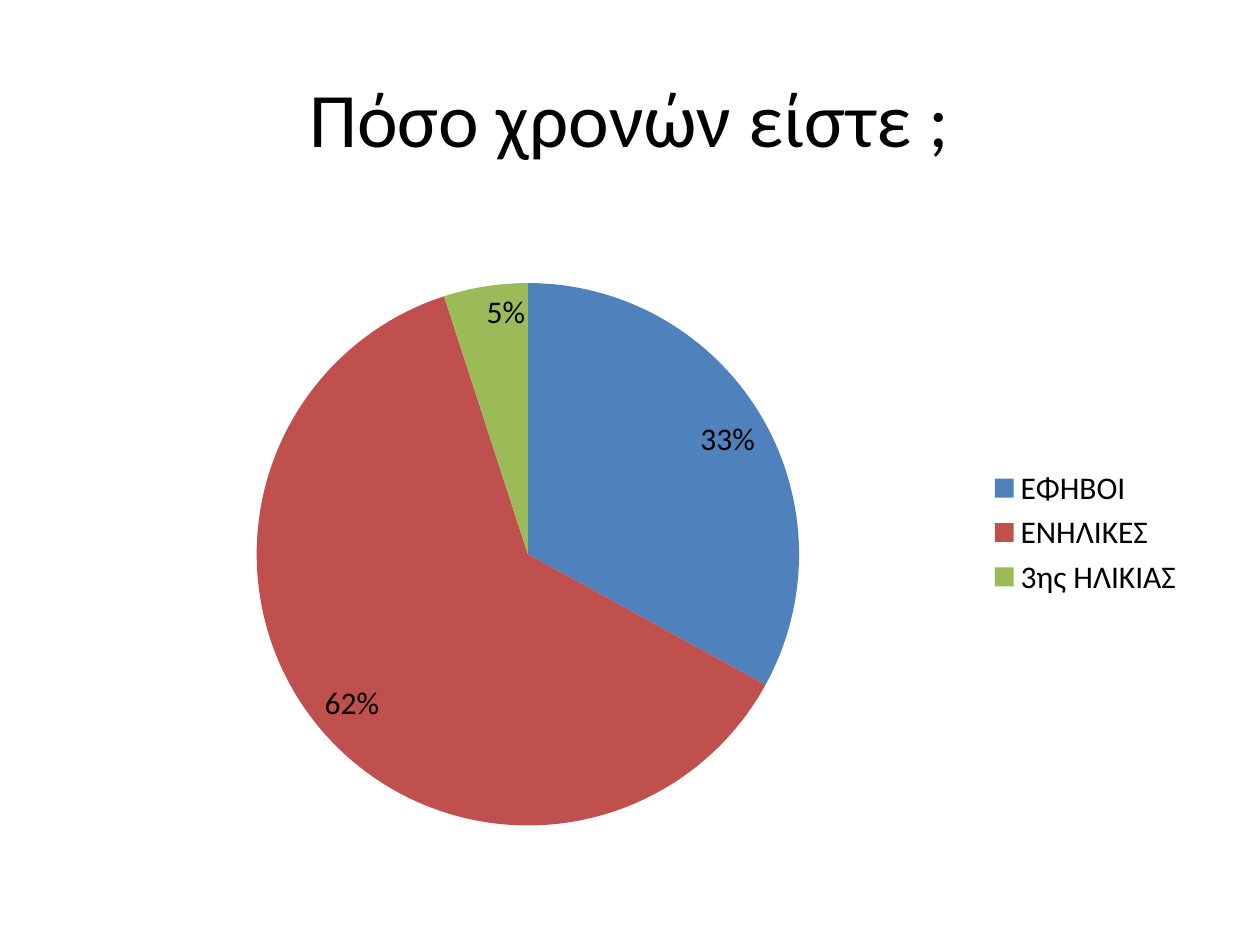
from dataclasses import dataclass

from lxml import etree
from pptx import Presentation
from pptx.chart.data import CategoryChartData
from pptx.dml.color import RGBColor
from pptx.enum.chart import XL_CHART_TYPE, XL_LABEL_POSITION, XL_LEGEND_POSITION
from pptx.enum.text import MSO_ANCHOR, PP_ALIGN
from pptx.oxml.ns import qn
from pptx.util import Cm, Pt

PIE = XL_CHART_TYPE.PIE
INSIDE_END = XL_LABEL_POSITION.INSIDE_END
LEGEND_RIGHT = XL_LEGEND_POSITION.RIGHT
CENTER = PP_ALIGN.CENTER
MIDDLE = MSO_ANCHOR.MIDDLE
TITLE_ONLY = 5


@dataclass(frozen=True)
class Theme:
    font: str = "Calibri"
    text: RGBColor = RGBColor(0x00, 0x00, 0x00)
    title_size: Pt = Pt(44)
    chart_size: Pt = Pt(18)


@dataclass(frozen=True)
class Box:
    left: float
    top: float
    width: float
    height: float

    def lengths(self) -> tuple:
        return Cm(self.left), Cm(self.top), Cm(self.width), Cm(self.height)


@dataclass(frozen=True)
class AgeGroup:
    label: str
    percent: int
    color: str


THEME = Theme()
TITLE_BOX = Box(1.27, 0.76, 22.86, 3.18)
CHART_BOX = Box(1.27, 4.45, 22.86, 12.57)
# Pie area in fractions of the chart box
PIE_AREA = {"x": 0.17, "y": 0.1, "w": 0.48, "h": 0.87}
AGE_GROUPS = [
    AgeGroup("ΕΦΗΒΟΙ", 33, "4F81BD"),
    AgeGroup("ΕΝΗΛΙΚΕΣ ", 62, "C0504D"),
    AgeGroup("3ης ΗΛΙΚΙΑΣ", 5, "9BBB59"),
]


def style_font(font, size: Pt) -> None:
    font.name = THEME.font
    font.size = size
    font.color.rgb = THEME.text


def write_title(slide, text: str) -> None:
    question = slide.shapes.title
    question.left, question.top, question.width, question.height = TITLE_BOX.lengths()
    frame = question.text_frame
    frame.vertical_anchor = MIDDLE
    paragraph = frame.paragraphs[0]
    paragraph.alignment = CENTER
    run = paragraph.add_run()
    run.text = text
    style_font(run.font, THEME.title_size)


def place_pie(chart, area: dict[str, float]) -> None:
    """Fix the inner plot area, which python-pptx has no property for."""
    plot_area = chart.plots[0]._element.getparent()
    layout = plot_area.find(qn("c:layout"))
    if layout is None:
        layout = etree.Element(qn("c:layout"))
        plot_area.insert(0, layout)
    manual = etree.SubElement(layout, qn("c:manualLayout"))
    settings = {"layoutTarget": "inner", "xMode": "edge", "yMode": "edge", **area}
    for tag, value in settings.items():
        etree.SubElement(manual, qn(f"c:{tag}")).set("val", str(value))


def draw_age_chart(slide, groups: list[AgeGroup]) -> None:
    data = CategoryChartData()
    data.categories = [group.label for group in groups]
    data.add_series("Series 1", [group.percent for group in groups])
    chart = slide.shapes.add_chart(PIE, *CHART_BOX.lengths(), data).chart
    chart.has_title = False
    style_font(chart.font, THEME.chart_size)
    place_pie(chart, PIE_AREA)

    # Legend
    chart.has_legend = True
    chart.legend.position = LEGEND_RIGHT
    chart.legend.include_in_layout = False

    # Slices
    plot = chart.plots[0]
    plot.vary_by_categories = True
    for index, group in enumerate(groups):
        fill = plot.series[0].points[index].format.fill
        fill.solid()
        fill.fore_color.rgb = RGBColor.from_string(group.color)

    # Percent labels
    labels = plot.series[0].data_labels
    labels.show_percentage = True
    labels.show_value = False
    labels.number_format = "0%"
    labels.number_format_is_linked = False
    labels.position = INSIDE_END
    style_font(labels.font, THEME.chart_size)


def main() -> None:
    presentation = Presentation()
    presentation.slide_width, presentation.slide_height = Cm(25.4), Cm(19.05)
    slide = presentation.slides.add_slide(presentation.slide_layouts[TITLE_ONLY])
    write_title(slide, "Πόσο χρονών είστε ;")
    draw_age_chart(slide, AGE_GROUPS)
    presentation.save("out.pptx")


if __name__ == "__main__":
    main()
